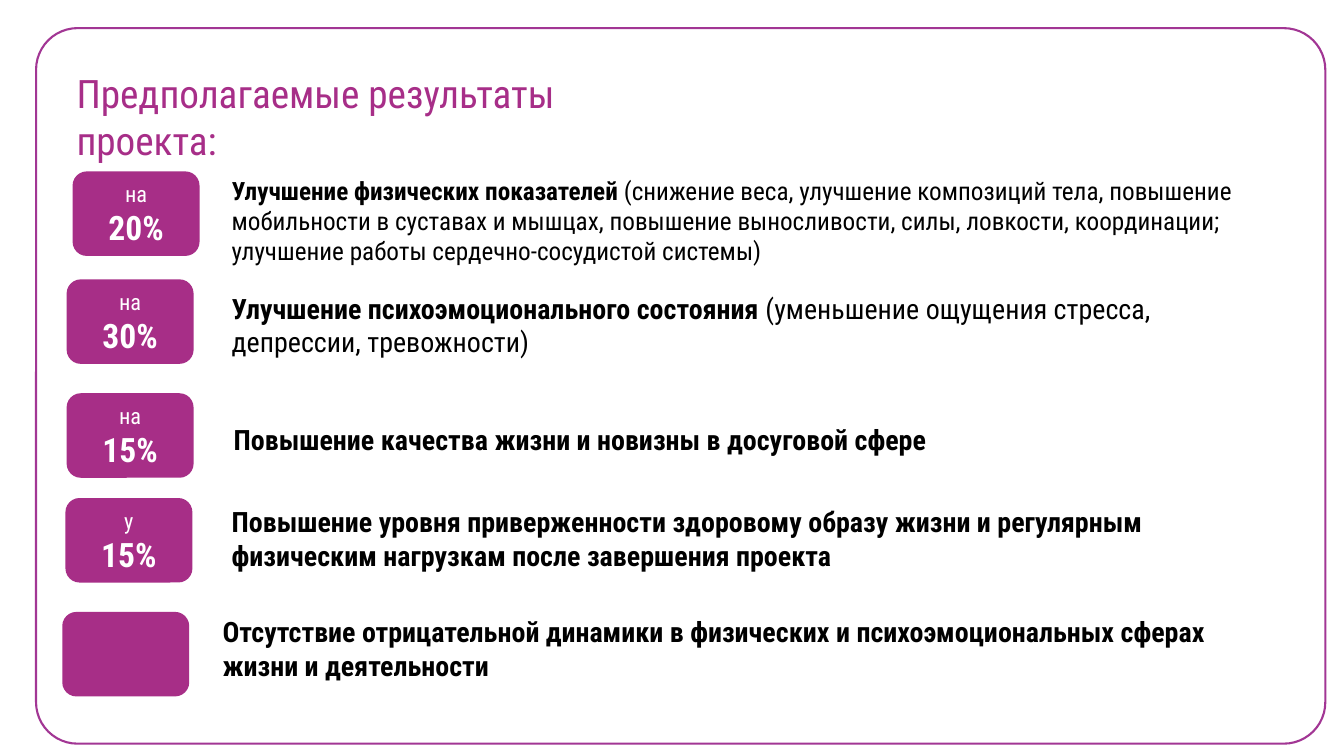
from dataclasses import dataclass
from pptx import Presentation
from pptx.dml.color import RGBColor
from pptx.enum.shapes import MSO_SHAPE
from pptx.enum.text import MSO_ANCHOR, PP_ALIGN
from pptx.util import Cm, Pt


@dataclass(frozen=True)
class Theme:
    font: str = "Roboto Condensed"
    edge: str = "A23694"
    title: str = "A72E88"
    badge: str = "A72E87"
    text: str = "000000"
    light: str = "FFFFFF"
    head: int = 28
    body: int = 20
    small: int = 18
    label: int = 16
    value: int = 24


LOOK = Theme()
BADGE = (3.2, 2.13)

# Badge place, badge lines, text box, text size, bold part, plain part
ROWS = [
    ((1.83, 4.32), "на\n20%", (5.59, 4.29, 26.64, 2.57), LOOK.small,
     "Улучшение физических показателей ",
     "(снижение веса, улучшение композиций тела, повышение мобильности в "
     "суставах и мышцах, повышение выносливости, силы, ловкости, координации; "
     "улучшение работы сердечно-сосудистой системы)"),
    ((1.68, 7.04), "на\n30%", (5.59, 7.21, 24.71, 1.96), LOOK.body,
     "Улучшение психоэмоционального состояния ",
     "(уменьшение ощущения стресса, депрессии, тревожности)"),
    ((1.68, 9.91), "на\n15%", (5.64, 10.52, 24.38, 1.12), LOOK.body,
     "Повышение качества жизни и новизны в досуговой сфере", ""),
    ((1.65, 12.55), "у\n15%", (5.59, 12.6, 25.02, 1.96), LOOK.body,
     "Повышение уровня приверженности здоровому образу жизни и регулярным "
     "физическим нагрузкам после завершения проекта", ""),
    ((1.57, 15.42), "", (5.36, 15.37, 25.48, 1.96), LOOK.body,
     "Отсутствие отрицательной динамики в физических и психоэмоциональных "
     "сферах жизни и деятельности", ""),
]


def color(code):
    return RGBColor.from_string(code)


def style(run, size, code, bold=False):
    font = run.font
    font.name, font.size, font.bold = LOOK.font, Pt(size), bold
    font.color.rgb = color(code)


def panel(slide, box):
    shape = slide.shapes.add_shape(MSO_SHAPE.ROUNDED_RECTANGLE, *map(Cm, box))
    shape.shadow.inherit = False
    return shape


def frame(slide, box):
    shape = panel(slide, box)
    shape.adjustments[0] = 0.058
    shape.fill.background()
    shape.line.color.rgb = color(LOOK.edge)
    shape.line.width = Pt(1.5)


def badge(slide, box, words):
    shape = panel(slide, box)
    shape.fill.solid()
    shape.fill.fore_color.rgb = color(LOOK.badge)
    shape.line.fill.background()
    if not words:
        return
    area = shape.text_frame
    area.text = words
    area.vertical_anchor = MSO_ANCHOR.MIDDLE
    for para, size in zip(area.paragraphs, (LOOK.label, LOOK.value)):
        para.alignment = PP_ALIGN.CENTER
        style(para.runs[0], size, LOOK.light, size == LOOK.value)


def note(slide, box, parts, size, code):
    """Place one paragraph made of (words, bold) parts."""
    area = slide.shapes.add_textbox(*map(Cm, box)).text_frame
    area.word_wrap = True
    for words, bold in parts:
        if words:
            run = area.paragraphs[0].add_run()
            run.text = words
            style(run, size, code, bold)


def result(slide, row):
    spot, words, box, size, strong, plain = row
    badge(slide, spot + BADGE, words)
    note(slide, box, [(strong, True), (plain, False)], size, LOOK.text)


def main():
    deck = Presentation()
    deck.slide_width, deck.slide_height = Cm(33.87), Cm(19.05)
    slide = deck.slides.add_slide(deck.slide_layouts[6])

    # Frame and title
    frame(slide, (0.91, 0.71, 32.49, 18.03))
    note(slide, (1.68, 1.63, 14.73, 1.45),
         [("Предполагаемые результаты проекта:", False)], LOOK.head, LOOK.title)

    # Expected results
    for row in ROWS:
        result(slide, row)

    deck.save("out.pptx")


if __name__ == "__main__":
    main()
